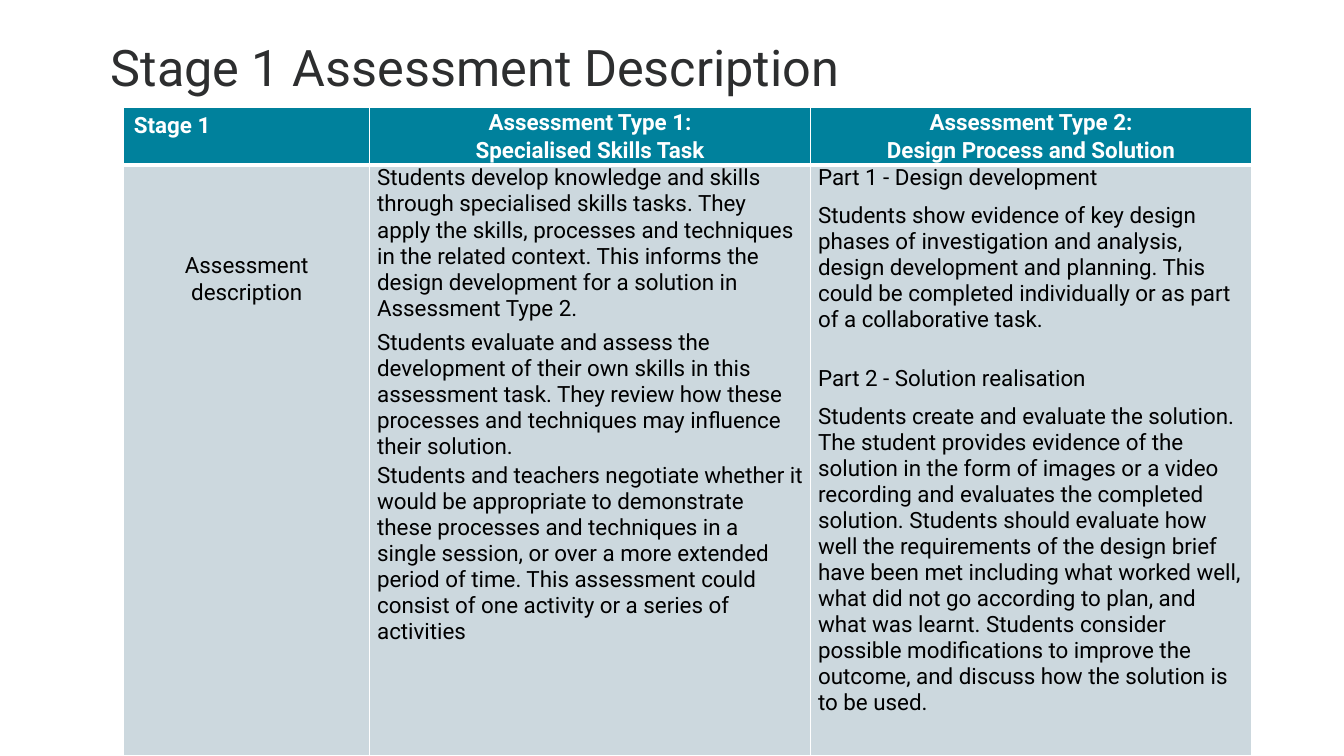
from lxml import etree
from pptx import Presentation
from pptx.dml.color import RGBColor
from pptx.enum.text import MSO_ANCHOR as Anchor, PP_ALIGN as Align
from pptx.oxml.ns import qn
from pptx.util import Pt

FONT = "Roboto"
TEAL, PALE = "00819C", "CCD8DE"
WHITE, BLACK, CHARCOAL = "FFFFFF", "000000", "2D2E2F"


def style(font, size, color, bold=False):
    font.name = FONT
    font.size = Pt(size)
    font.bold = bold
    font.color.rgb = RGBColor.from_string(color)


def add_borders(cell, widths):
    """Draw white cell borders; widths maps a side letter (L, R, T, B) to points."""
    properties = cell._tc.get_or_add_tcPr()
    for side, width in widths.items():
        line = etree.SubElement(properties, qn(f"a:ln{side}"), w=str(Pt(width)))
        fill = etree.SubElement(line, qn("a:solidFill"))
        etree.SubElement(fill, qn("a:srgbClr"), val=WHITE)


# Each cell is a list of (text, space before in points)
HEADERS = [
    [("Stage 1", 0)],
    [("Assessment Type 1:\vSpecialised Skills Task", 0)],
    [("Assessment Type 2:\vDesign Process and Solution", 0)],
]
DESCRIPTIONS = [
    [("Assessment description", 0)],
    [
        ("Students develop knowledge and skills through specialised skills tasks. "
         "They apply the skills, processes and techniques in the related context. "
         "This informs the design development for a solution in Assessment Type 2.", 0),
        ("Students evaluate and assess the development of their own skills in this "
         "assessment task. They review how these processes and techniques may "
         "influence their solution.", 6),
        ("Students and teachers negotiate whether it would be appropriate to "
         "demonstrate these processes and techniques in a single session, or over a "
         "more extended period of time. This assessment could consist of one activity "
         "or a series of activities", 2),
    ],
    [
        ("Part 1 - Design development", 0),
        ("Students show evidence of key design phases of investigation and analysis, "
         "design development and planning. This could be completed individually or as "
         "part of a collaborative task.", 8),
        ("Part 2 - Solution realisation", 24),
        ("Students create and evaluate the solution. The student provides evidence of "
         "the solution in the form of images or a video recording and evaluates the "
         "completed solution. Students should evaluate how well the requirements of "
         "the design brief have been met including what worked well, what did not go "
         "according to plan, and what was learnt. Students consider possible "
         "modifications to improve the outcome, and discuss how the solution is to be "
         "used.", 8),
    ],
]
COLUMN_WIDTHS = [175.5, 315, 315]
ROW_HEIGHTS = [41, 422]

presentation = Presentation()
presentation.slide_width = Pt(960)
presentation.slide_height = Pt(540)
slide = presentation.slides.add_slide(presentation.slide_layouts[6])

# Title
title = slide.shapes.add_textbox(Pt(72), Pt(16), Pt(840), Pt(68))
title.text_frame.word_wrap = True
title.text_frame.vertical_anchor = Anchor.MIDDLE
title.text_frame.text = "Stage 1 Assessment Description"
title.text_frame.paragraphs[0].line_spacing = 0.9
style(title.text_frame.paragraphs[0].runs[0].font, 36, CHARCOAL)

# Assessment table
table = slide.shapes.add_table(
    2, 3, Pt(88.5), Pt(77), Pt(sum(COLUMN_WIDTHS)), Pt(sum(ROW_HEIGHTS))).table
for column, width in zip(table.columns, COLUMN_WIDTHS):
    column.width = Pt(width)
for row, height in zip(table.rows, ROW_HEIGHTS):
    row.height = Pt(height)

for row_index, contents in enumerate([HEADERS, DESCRIPTIONS]):
    is_header = row_index == 0
    for column_index, content in enumerate(contents):
        cell = table.cell(row_index, column_index)
        add_borders(cell, {"L": 1, "R": 1, "T": 1 if is_header else 3,
                           "B": 3 if is_header else 1})
        cell.fill.solid()
        cell.fill.fore_color.rgb = RGBColor.from_string(TEAL if is_header else PALE)

        is_stage = is_header and column_index == 0
        is_label = not is_header and column_index == 0
        if not is_stage:
            cell.margin_left = cell.margin_right = Pt(5.4)
            cell.margin_top = Pt(61 if is_label else 0)
            cell.margin_bottom = 0

        cell.text_frame.text = "\n".join(text for text, _ in content)
        for paragraph, (_, before) in zip(cell.text_frame.paragraphs, content):
            if before:
                paragraph.space_before = Pt(before)
            if is_label or is_header and not is_stage:
                paragraph.alignment = Align.CENTER
                paragraph.line_spacing = 1.07
            for run in paragraph.runs:
                style(run.font, 16, WHITE if is_header else BLACK, is_header)

presentation.save("out.pptx")
